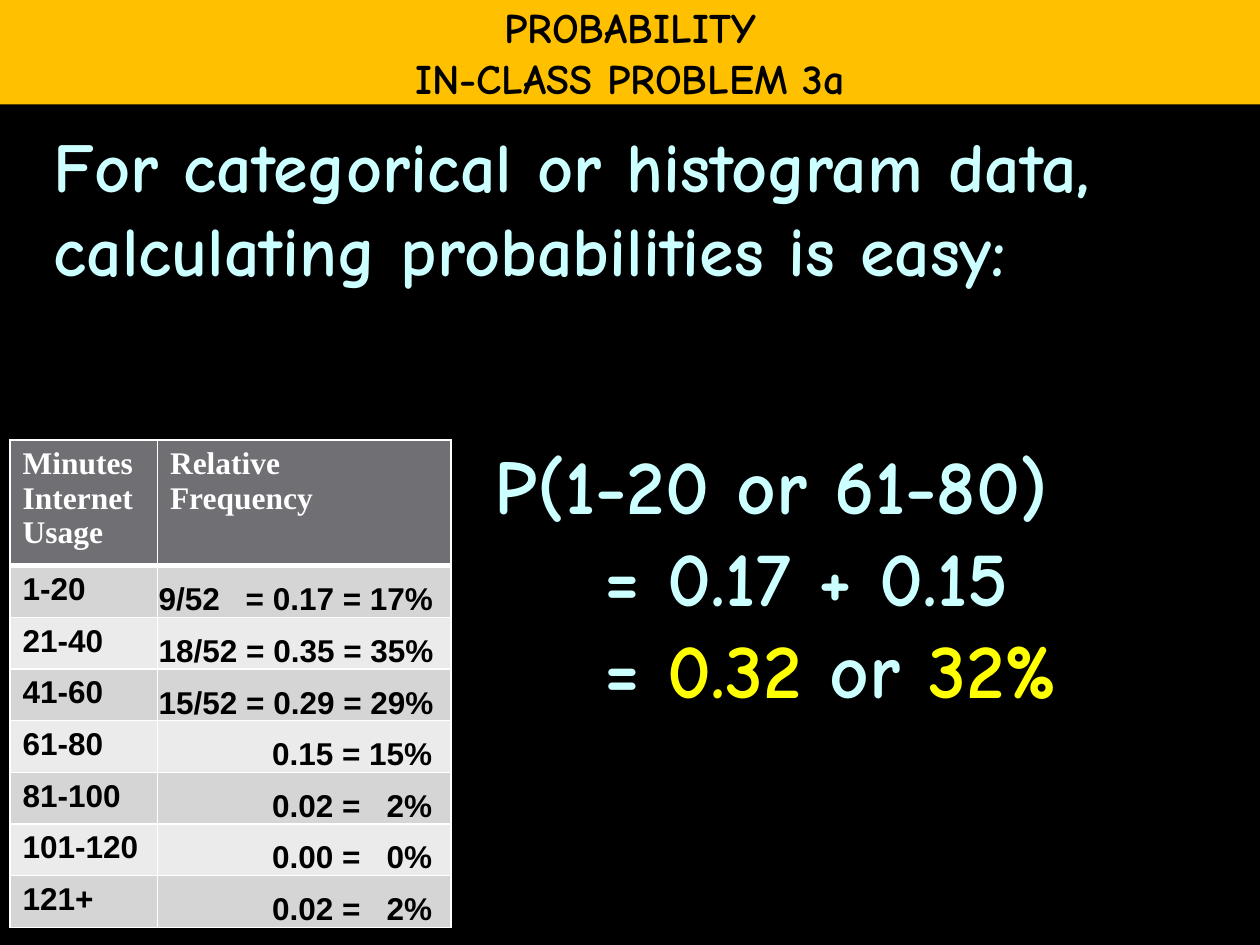
from lxml import etree
from pptx import Presentation
from pptx.dml.color import RGBColor
from pptx.enum.shapes import MSO_SHAPE
from pptx.enum.text import MSO_ANCHOR, PP_ALIGN
from pptx.oxml.ns import qn
from pptx.util import Inches, Pt

COLORS = {
    "black": "000000", "white": "FFFFFF", "aqua": "CCFFFF", "yellow": "FFFF00",
    "gold": "FFC000", "header": "6F6F74", "odd": "D5D5D6", "even": "EBEBEC",
}


def add_text(p, text, size=18, font="Comic Neue", color="aqua"):
    r = p.add_run()
    r.text = text
    r.font.size = Pt(size)
    r.font.name = font
    r.font.bold = True
    r.font.color.rgb = RGBColor.from_string(COLORS[color])


def add_border(cell, side, width):
    ln = etree.SubElement(cell._tc.get_or_add_tcPr(), qn(f"a:ln{side}"), w=str(Pt(width)))
    fill = etree.SubElement(ln, qn("a:solidFill"))
    etree.SubElement(fill, qn("a:srgbClr"), val=COLORS["white"])


prs = Presentation()
prs.slide_width, prs.slide_height = Inches(10), Inches(7.5)
s = prs.slides.add_slide(prs.slide_layouts[6])
s.background.fill.solid()
s.background.fill.fore_color.rgb = RGBColor.from_string(COLORS["black"])

tf = s.shapes.add_textbox(Inches(0.33), Inches(0.92), Inches(9.25), Inches(6.17)).text_frame
tf.word_wrap = True
add_text(tf.paragraphs[0], "For categorical or histogram data, calculating probabilities is easy:", size=40)

rows = [
    ("Minutes Internet Usage", "Relative\nFrequency"),
    ("1-20", "9/52\t= 0.17 = 17%"),
    ("21-40", "18/52 = 0.35 = 35%"),
    ("41-60", "15/52 = 0.29 = 29%"),
    ("61-80", "0.15 = 15%"),
    ("81-100", "0.02 =\t2%"),
    ("101-120", "0.00 =\t0%"),
    ("121+", "0.02 =\t2%"),
]
table = s.shapes.add_table(len(rows), 2, Inches(0.08), Inches(3.49), Inches(3.5), Inches(3.84)).table
table.columns[0].width, table.columns[1].width = Inches(1.17), Inches(2.33)
for i, row in enumerate(rows):
    table.rows[i].height = Inches(0.41 if i else 1)
    for j, text in enumerate(row):
        cell = table.cell(i, j)
        for side in "LRTB":
            thick = (i == 0 and side == "B") or (i == 1 and side == "T")
            add_border(cell, side, 3 if thick else 1)
        cell.fill.solid()
        shade = "header" if i == 0 else "odd" if i % 2 else "even"
        cell.fill.fore_color.rgb = RGBColor.from_string(COLORS[shade])
        tf = cell.text_frame
        for k, line in enumerate(text.split("\n")):
            p = tf.add_paragraph() if k else tf.paragraphs[0]
            add_text(p, line, font="Arial" if i else "Times New Roman", color="black" if i else "white")
        if i and j:
            has_fraction = "/" in text
            cell.vertical_anchor = MSO_ANCHOR.BOTTOM
            cell.margin_left = Inches(0.01 if has_fraction else 0.91)
            cell.margin_right = cell.margin_top = Inches(0.01)
            cell.margin_bottom = 0
            if "\t" in text:
                tabs = etree.SubElement(tf.paragraphs[0]._p.get_or_add_pPr(), qn("a:tabLst"))
                pos, align = (0.69, "l") if has_fraction else (1.27, "r")
                etree.SubElement(tabs, qn("a:tab"), pos=str(Inches(pos)), algn=align)

solution = [
    [("P(1-20 or 61-80)", "aqua")],
    [("= 0.17 + 0.15", "aqua")],
    [("= ", "aqua"), ("0.32 ", "yellow"), ("or ", "aqua"), ("32%", "yellow")],
]
tf = s.shapes.add_textbox(Inches(3.83), Inches(3.42), Inches(5.98), Inches(2.32)).text_frame
tf.word_wrap = True
for i, line in enumerate(solution):
    p = tf.add_paragraph() if i else tf.paragraphs[0]
    if i:
        p._p.get_or_add_pPr().set("marL", str(Inches(0.87)))
    for text, color in line:
        add_text(p, text, size=44, color=color)

sp = s.shapes.add_shape(MSO_SHAPE.RECTANGLE, 0, 0, Inches(10), Inches(0.83))
sp.shadow.inherit = False
sp.fill.solid()
sp.fill.fore_color.rgb = RGBColor.from_string(COLORS["gold"])
sp.line.fill.background()
tf = sp.text_frame
tf.word_wrap = False
tf.vertical_anchor = MSO_ANCHOR.MIDDLE
for i, line in enumerate(["PROBABILITY", "IN-CLASS PROBLEM 3a"]):
    p = tf.add_paragraph() if i else tf.paragraphs[0]
    p.alignment = PP_ALIGN.CENTER
    add_text(p, line, size=24, color="black")

prs.save("out.pptx")
